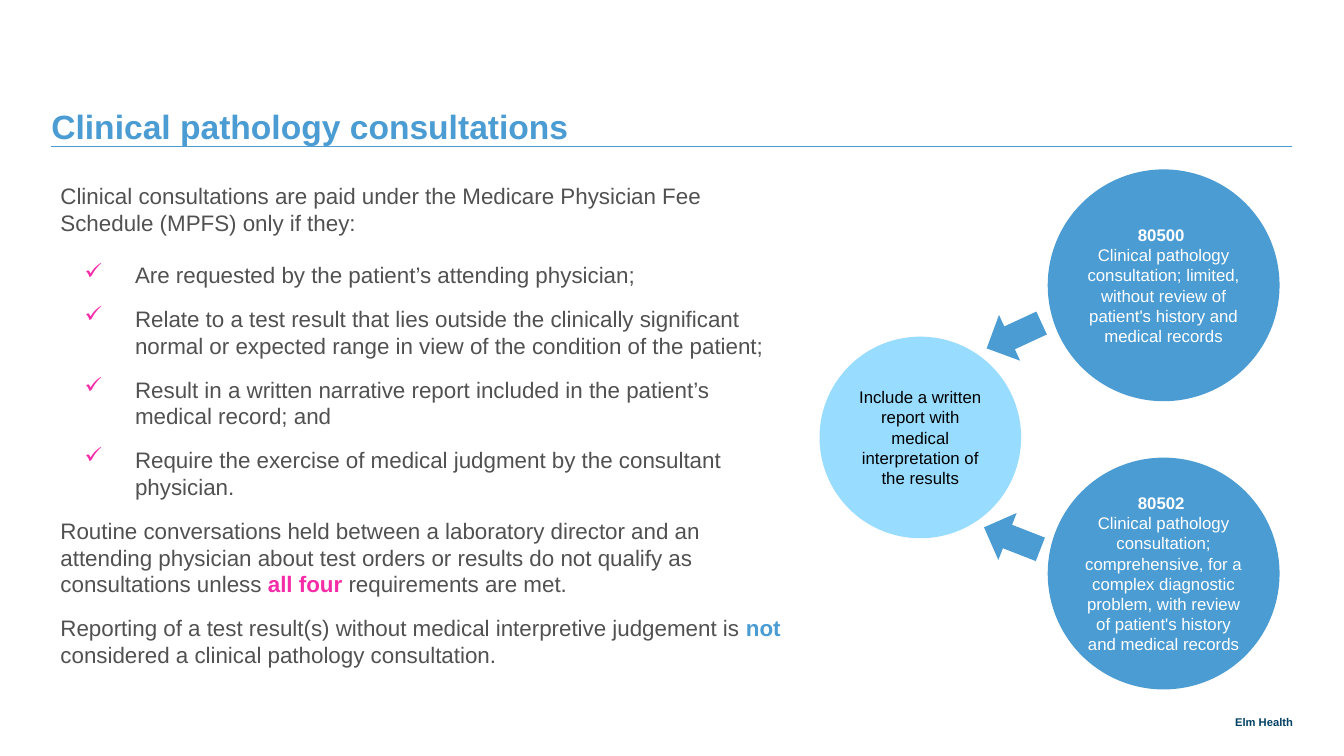
from lxml.etree import SubElement
from pptx import Presentation
from pptx.dml.color import RGBColor
from pptx.enum.shapes import MSO_CONNECTOR as Line, MSO_SHAPE as Shape
from pptx.enum.text import MSO_ANCHOR as Anchor, PP_ALIGN as Align
from pptx.oxml.ns import qn
from pptx.util import Pt

BLUE, LIGHT_BLUE, PINK = "4B9CD3", "98DCFF", "F52CA8"
GREY, NAVY, WHITE, BLACK = "515151", "004163", "FFFFFF", "000000"

INTRO = "Clinical consultations are paid under the Medicare Physician Fee Schedule (MPFS) only if they:"
REQUIREMENTS = [
    "Are requested by the patient’s attending physician;",
    "Relate to a test result that lies outside the clinically significant normal or expected range "
    "in view of the condition of the patient;",
    "Result in a written narrative report included in the patient’s medical record; and",
    "Require the exercise of medical judgment by the consultant physician.",
]
CLOSING = [
    [("Routine conversations held between a laboratory director and an attending physician about "
      "test orders or results do not qualify as consultations unless ", GREY, False),
     ("all four ", PINK, True),
     ("requirements are met.", GREY, False)],
    [("Reporting of a test result(s) without medical interpretive judgement is ", GREY, False),
     ("not ", BLUE, True),
     ("considered a clinical pathology consultation.", GREY, False)],
]
LIMITED = ("Clinical pathology consultation; limited, without review of patient's history "
           "and medical records")
COMPREHENSIVE = ("Clinical pathology consultation; comprehensive, for a complex diagnostic problem, "
                 "with review of patient's history and medical records")
REPORT = "Include a written report with medical interpretation of the results"


def color(value):
    return RGBColor.from_string(value)


def set_all(target, formats):
    for name, value in formats.items():
        setattr(target, name, value)


def set_frame(shape, anchor, insets=(0, 0, 0, 0)):
    """Wrap the text and set its anchor and left, top, right, bottom insets."""
    frame = shape.text_frame
    sides = ("margin_left", "margin_top", "margin_right", "margin_bottom")
    set_all(frame, {"word_wrap": True, "vertical_anchor": anchor})
    set_all(frame, dict(zip(sides, map(Pt, insets))))
    return frame


def add_para(frame, spans, size, **formats):
    """Write (text, colour, bold) spans into the next paragraph of the frame."""
    para = frame.paragraphs[0]
    if para.runs:
        para = frame.add_paragraph()
    set_all(para, formats)
    for text, hue, bold in spans:
        span = para.add_run()
        span.text = text
        set_all(span.font, {"name": "Arial", "size": Pt(size), "bold": bold})
        span.font.color.rgb = color(hue)
    return para


def set_indent(para, left, first, mark=None):
    props = para._p.get_or_add_pPr()
    props.set("marL", str(Pt(left)))
    props.set("indent", str(Pt(first)))
    if mark:
        hue = SubElement(props, qn("a:buClr"))
        SubElement(hue, qn("a:srgbClr"), val=PINK)
        SubElement(props, qn("a:buChar"), char=mark)


def add_text_box(page, box, anchor, insets=(0, 0, 0, 0)):
    return set_frame(page.shapes.add_textbox(*map(Pt, box)), anchor, insets)


def add_filled(page, kind, box, fill):
    shape = page.shapes.add_shape(kind, *map(Pt, box))
    shape.shadow.inherit = False
    shape.fill.solid()
    shape.fill.fore_color.rgb = color(fill)
    shape.line.fill.background()
    return shape


def add_header(page, box):
    """Place the title, with a rule across the bottom of the box."""
    left, top, width, height = box
    frame = add_text_box(page, (left, top, width, 57), Anchor.BOTTOM, (0, 68.4, 152.6, 0))
    add_para(frame, [("Clinical pathology consultations", BLUE, True)], 24, line_spacing=Pt(28))
    bottom = top + height
    rule = page.shapes.add_connector(Line.STRAIGHT, *map(Pt, (left, bottom, left + width, bottom)))
    rule.line.color.rgb = color(BLUE)
    rule.line.width = Pt(0.5)
    SubElement(rule._element.spPr, qn("a:effectLst"))


def add_body(page, box):
    frame = add_text_box(page, box, Anchor.TOP, (0, 5.76, 7.2, 0))
    spacing = {"space_before": Pt(6), "space_after": Pt(6)}
    intro = add_para(frame, [(INTRO, GREY, False)], 16, space_after=Pt(12))
    set_indent(intro, 4.32, 0)
    for requirement in REQUIREMENTS:
        para = add_para(frame, [(requirement, GREY, False)], 16, **spacing)
        set_indent(para, 57.6, -36, "✓")
    for spans in CLOSING:
        set_indent(add_para(frame, spans, 16, **spacing), 4.32, 0)


def add_circle(page, kind, box, fill, paras, insets=(0, 0, 0, 0)):
    frame = set_frame(add_filled(page, kind, box, fill), Anchor.MIDDLE, insets)
    for spans in paras:
        add_para(frame, [spans], 12, alignment=Align.CENTER)


def add_diagram(page, box):
    """Two billing codes on the right, each pointing to the shared report on the left."""
    left, top, width, height = box
    code_size, report_size = 165.6, 144
    code_left = left + width - code_size
    codes = [("80500 ", LIMITED, top), ("80502 ", COMPREHENSIVE, top + height - code_size)]
    for code, meaning, code_top in codes:
        add_circle(page, Shape.OVAL, (code_left, code_top, code_size, code_size), BLUE,
                   [(code, WHITE, True), (meaning, WHITE, False)])
    report_box = (left, top + 119.5, report_size, report_size)
    add_circle(page, Shape.FLOWCHART_CONNECTOR, report_box, LIGHT_BLUE,
               [(REPORT, BLACK, False)], (7.2, 3.6, 7.2, 3.6))
    for across, down, turn in [(117.4, 100.8, 155.2), (116, 245.5, 201.3)]:
        arrow_box = (left + across, top + down, 43.2, 36)
        add_filled(page, Shape.RIGHT_ARROW, arrow_box, BLUE).rotation = turn


def add_footer(page, box):
    frame = add_text_box(page, box, Anchor.BOTTOM)
    add_para(frame, [("Elm Health", NAVY, True)], 8, alignment=Align.RIGHT)


def main():
    deck = Presentation()
    set_all(deck, {"slide_width": Pt(960), "slide_height": Pt(540)})
    page = deck.slides.add_slide(deck.slide_layouts[6])
    add_footer(page, (805.7, 504, 118, 16.6))
    add_header(page, (36.7, 27.4, 886.4, 77))
    add_body(page, (38.9, 124.6, 528.5, 382.3))
    add_diagram(page, (585.4, 121, 328.6, 371.5))
    deck.save("out.pptx")


if __name__ == "__main__":
    main()
